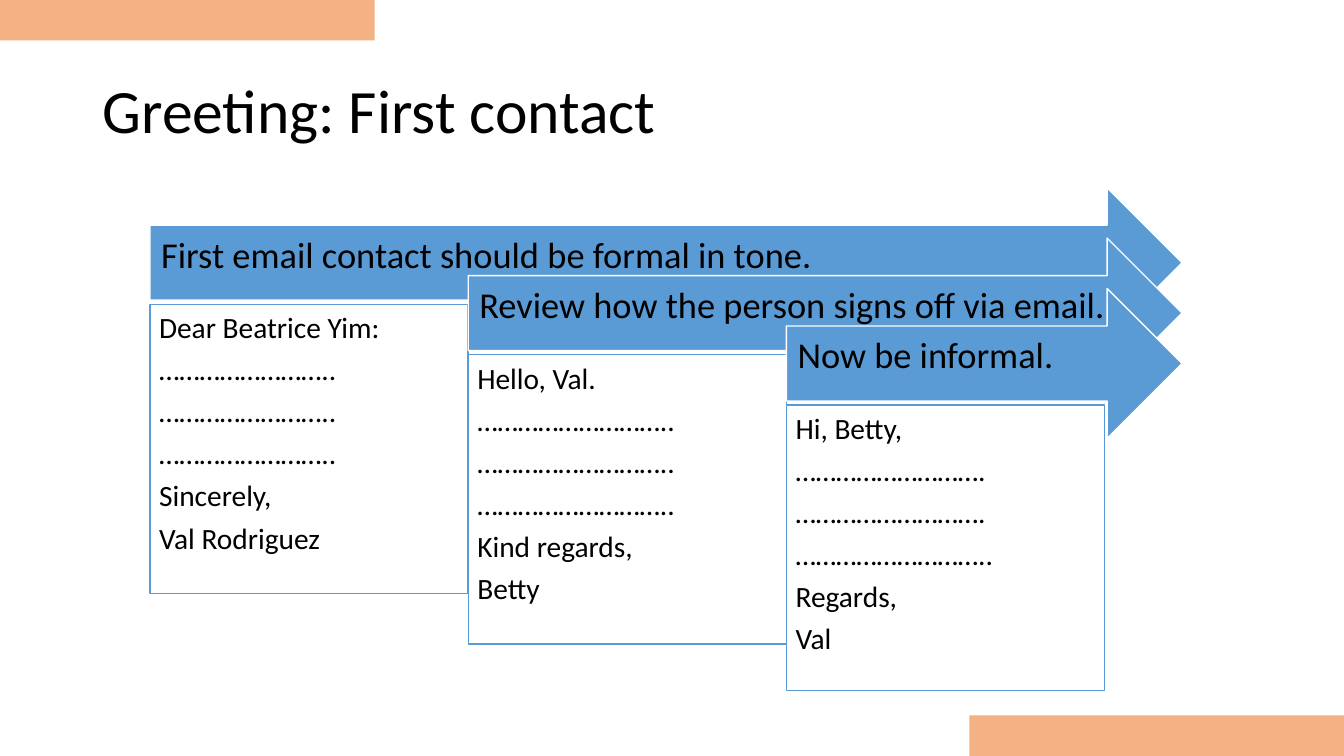
from pptx import Presentation
from pptx.dml.color import RGBColor
from pptx.enum.shapes import MSO_SHAPE as Preset
from pptx.enum.text import MSO_ANCHOR as Anchor, MSO_AUTO_SIZE as AutoSize, PP_ALIGN as Align
from pptx.util import Cm, Pt

BLUE, ORANGE, WHITE, BLACK = "5B9BD5", "F4B183", "FFFFFF", "000000"
FONT = "Calibri"
SLIDE_WIDTH, SLIDE_HEIGHT = 33.87, 19.05


def add_block(preset, place, fill, line=None):
    """Add a flat shape; place is left, top, width and height in cm."""
    block = slide.shapes.add_shape(preset, *[Cm(length) for length in place])
    block.shadow.inherit = False
    block.fill.solid()
    block.fill.fore_color.rgb = RGBColor.from_string(fill)
    if line:
        block.line.color.rgb = RGBColor.from_string(line)
        block.line.width = Pt(1)
    else:
        block.line.fill.background()
    return block


def write_lines(block, lines, size, anchor, margins=None, space=0):
    """Fill a shape with left-aligned paragraphs; margins are left, top, right, bottom in cm."""
    frame = block.text_frame
    frame.word_wrap = True
    frame.auto_size = AutoSize.NONE
    frame.vertical_anchor = anchor
    if margins:
        (frame.margin_left, frame.margin_top,
         frame.margin_right, frame.margin_bottom) = [Cm(margin) for margin in margins]
    frame.text = "\n".join(lines)
    for para in frame.paragraphs:
        para.alignment = Align.LEFT
        para.line_spacing = 0.9
        para.space_after = Pt(space)
        para.font.name = FONT
        para.font.size = Pt(size)
        para.font.color.rgb = RGBColor.from_string(BLACK)


deck = Presentation()
deck.slide_width, deck.slide_height = Cm(SLIDE_WIDTH), Cm(SLIDE_HEIGHT)
slide = deck.slides.add_slide(deck.slide_layouts[5])

title = slide.shapes.title
title.left, title.top, title.width, title.height = Cm(2.33), Cm(1.01), Cm(29.21), Cm(3.68)
write_lines(title, ["Greeting: First contact"], 44, Anchor.MIDDLE)

# Each stage: arrow heading, letter height, letter lines
stages = [
    ("First email contact should be formal in tone.", 7.29,
     ["Dear Beatrice Yim:", "……………………..", "……………………..", "……………………..",
      "Sincerely,", "Val Rodriguez"]),
    ("Review how the person signs off via email.", 7.29,
     ["Hello, Val.", "………………………..", "………………………..", "………………………..",
      "Kind regards,", "Betty"]),
    ("Now be informal.", 7.19,
     ["Hi, Betty,", "……………………….", "……………………….", "………………………..",
      "Regards,", "Val"]),
]
FIRST_LEFT, ARROW_TIP, LETTER_WIDTH = 3.78, 29.79, 8.02
ARROW_TOP, ARROW_HEIGHT, LETTER_TOP, STEP_DOWN = 4.73, 3.78, 7.67, 1.27

for index, (heading, letter_height, letter_lines) in enumerate(stages):
    left = FIRST_LEFT + index * LETTER_WIDTH
    drop = index * STEP_DOWN
    arrow = add_block(Preset.RIGHT_ARROW,
                      (left, ARROW_TOP + drop, ARROW_TIP - left, ARROW_HEIGHT), BLUE, WHITE)
    write_lines(arrow, [heading], 26, Anchor.MIDDLE, (0.28, 0.28, 0.7, 0.6), 9.1)
    letter = add_block(Preset.RECTANGLE,
                       (left, LETTER_TOP + drop, LETTER_WIDTH, letter_height), WHITE, BLUE)
    write_lines(letter, letter_lines, 21, Anchor.TOP, (0.23,) * 4, 7.35)

BAR_WIDTH, BAR_HEIGHT = 9.44, 1.02
for left, top in [(0, 0), (SLIDE_WIDTH - BAR_WIDTH, SLIDE_HEIGHT - BAR_HEIGHT)]:
    add_block(Preset.RECTANGLE, (left, top, BAR_WIDTH, BAR_HEIGHT), ORANGE)

deck.save("out.pptx")
